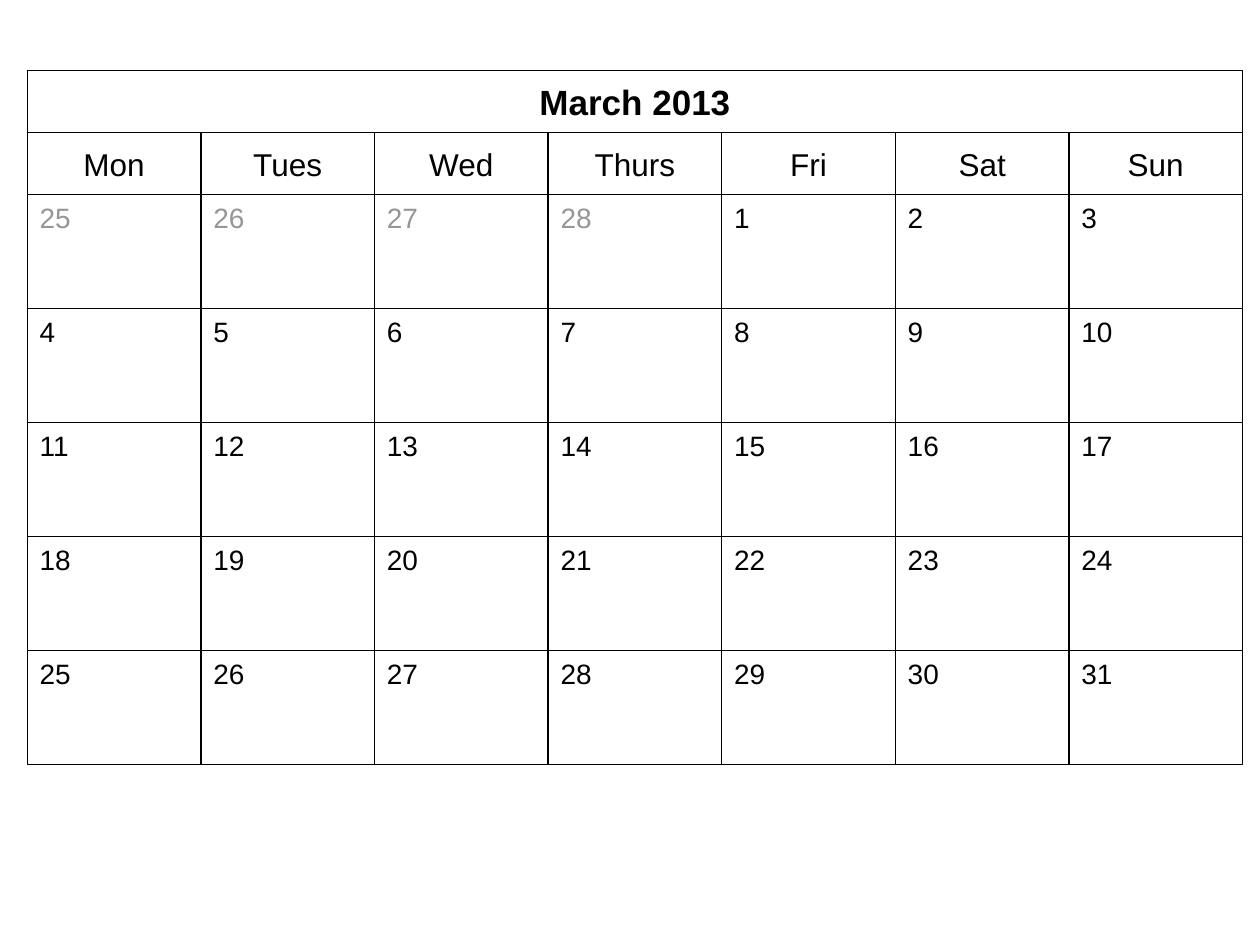
from pptx import Presentation
from pptx.dml.color import RGBColor
from pptx.enum.shapes import MSO_SHAPE
from pptx.enum.text import MSO_ANCHOR, PP_ALIGN
from pptx.util import Cm, Pt

LEFT, TOP = 0.55, 1.42
WIDTH, HEAD, HEIGHT = 3.5, 1.25, 2.3
BLACK, GREY, WHITE = "000000", "969696", "FFFFFF"
DAYS = ["Mon", "Tues", "Wed", "Thurs", "Fri", "Sat", "Sun"]
DATES = [*range(25, 29), *range(1, 32)]


def paint(target, color):
    target.rgb = RGBColor.from_string(color)


def add_box(slide, x, y, width, height):
    box = slide.shapes.add_shape(
        MSO_SHAPE.RECTANGLE, Cm(x), Cm(y), Cm(width), Cm(height))
    box.shadow.inherit = False
    box.fill.background()
    paint(box.line.color, BLACK)
    box.line.width = Pt(0.75)
    box.text_frame.word_wrap = True
    return box


def add_text(box, text, size, color, align, bold=False):
    para = box.text_frame.paragraphs[0]
    para.alignment = align
    run = para.add_run()
    run.text = text
    run.font.name = "Arial"
    run.font.size = Pt(size)
    run.font.bold = bold
    paint(run.font.color, color)


def add_head(slide, text, x, y, width, size, bold=False):
    box = add_box(slide, x, y, width, HEAD)
    box.fill.solid()
    paint(box.fill.fore_color, WHITE)
    frame = box.text_frame
    frame.vertical_anchor = MSO_ANCHOR.MIDDLE
    frame.margin_top = frame.margin_bottom = Cm(0.05)
    add_text(box, text, size, BLACK, PP_ALIGN.CENTER, bold)


def add_date(slide, text, x, y, color):
    box = add_box(slide, x, y, WIDTH, HEIGHT)
    box.text_frame.vertical_anchor = MSO_ANCHOR.TOP
    add_text(box, text, 16, color, PP_ALIGN.LEFT)


def main():
    deck = Presentation()
    deck.slide_width, deck.slide_height = Cm(25.4), Cm(19.05)
    slide = deck.slides.add_slide(deck.slide_layouts[6])

    add_head(slide, "March 2013", LEFT, TOP, WIDTH * len(DAYS), 20, True)
    for col, day in enumerate(DAYS):
        add_head(slide, day, LEFT + col * WIDTH, TOP + HEAD, WIDTH, 18)

    for index, date in enumerate(DATES):
        row, col = divmod(index, len(DAYS))
        add_date(slide, str(date), LEFT + col * WIDTH,
                 TOP + 2 * HEAD + row * HEIGHT, GREY if index < 4 else BLACK)

    deck.save("out.pptx")


if __name__ == "__main__":
    main()
